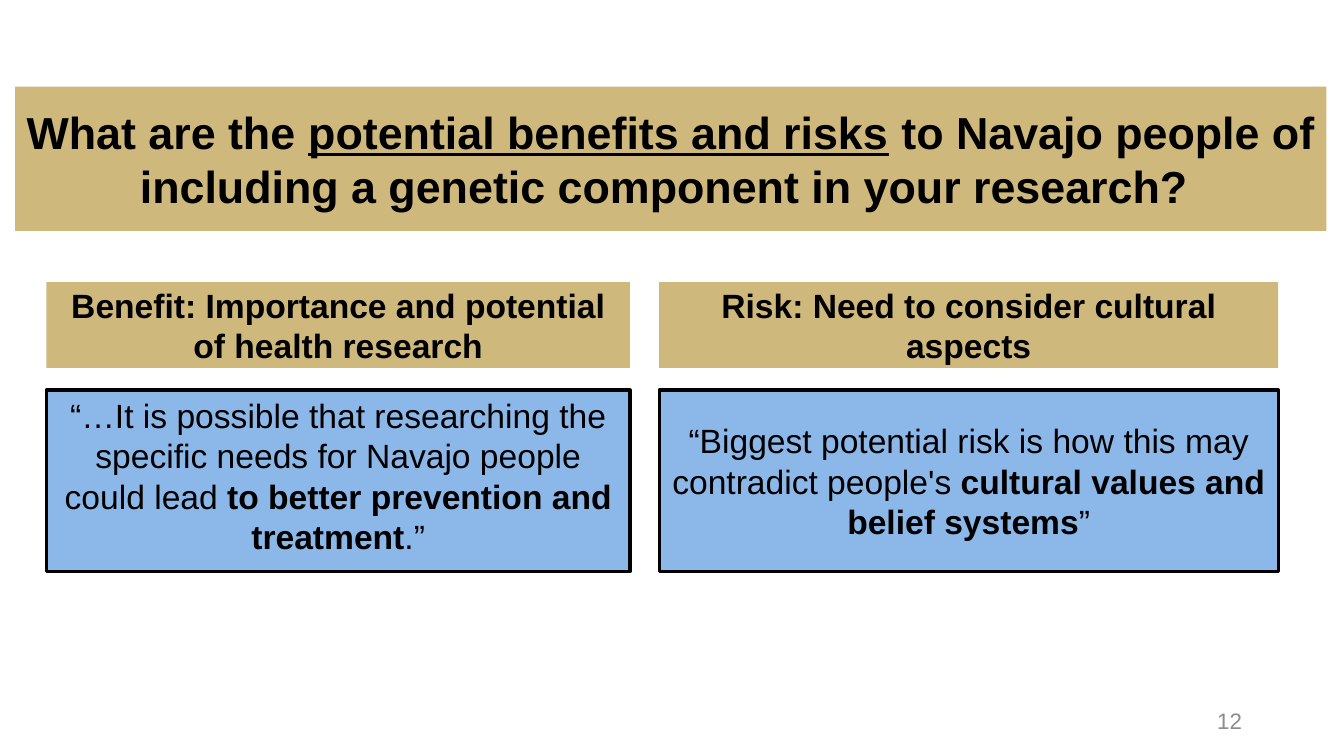
from pptx import Presentation
from pptx.dml.color import RGBColor
from pptx.enum.shapes import MSO_SHAPE
from pptx.enum.text import MSO_ANCHOR, MSO_AUTO_SIZE, PP_ALIGN
from pptx.util import Pt

RECTANGLE = MSO_SHAPE.RECTANGLE
TOP, MIDDLE = MSO_ANCHOR.TOP, MSO_ANCHOR.MIDDLE
CENTER, RIGHT = PP_ALIGN.CENTER, PP_ALIGN.RIGHT
NO_AUTOFIT = MSO_AUTO_SIZE.NONE

GOLD = RGBColor(0xCF, 0xB8, 0x7C)
BLUE = RGBColor(0x8B, 0xB8, 0xE8)
BLACK = RGBColor(0, 0, 0)
GRAY = RGBColor(0x8C, 0x8C, 0x8C)

# Content: runs are (text, bold, underline)
QUESTION = [
    ("What are the ", True, False),
    ("potential benefits and risks", True, True),
    (" to Navajo people of including a genetic component in your research? ", True, False),
]
# Columns: left, width, heading, quote runs, quote anchor
COLUMNS = [
    (33.12, 416.88, "Benefit: Importance and potential of health research", [
        ("“…It is possible that researching the specific needs for Navajo people could lead ",
         False, False),
        ("to better prevention and treatment", True, False),
        (".”", False, False),
    ], TOP),
    (470.88, 442.08, "Risk: Need to consider cultural aspects", [
        ("“Biggest potential risk is how this may contradict people's ", False, False),
        ("cultural values and belief systems", True, False),
        ("”", False, False),
    ], MIDDLE),
]
SLIDE_NUMBER = "12"

# Rows: top, height
HEADING_ROW = (201.6, 61.2)
QUOTE_ROW = (278.64, 129.6)


def write(shape, runs, size, color=BLACK, anchor=MIDDLE, alignment=CENTER):
    frame = shape.text_frame
    frame.word_wrap = True
    frame.auto_size = NO_AUTOFIT
    frame.vertical_anchor = anchor
    paragraph = frame.paragraphs[0]
    paragraph.alignment = alignment
    for text, bold, underline in runs:
        run = paragraph.add_run()
        run.text = text
        font = run.font
        font.name, font.size = "Arial", Pt(size)
        font.bold, font.underline = bold, underline
        font.color.rgb = color


def paint(shape, color):
    shape.fill.solid()
    shape.fill.fore_color.rgb = color


def add_box(slide, left, width, row, color):
    top, height = row
    box = slide.shapes.add_shape(RECTANGLE, Pt(left), Pt(top), Pt(width), Pt(height))
    box.shadow.inherit = False
    paint(box, color)
    box.line.fill.background()
    return box


def main():
    presentation = Presentation()
    presentation.slide_width, presentation.slide_height = Pt(960), Pt(540)
    slide = presentation.slides.add_slide(presentation.slide_layouts[5])

    # Question banner
    title = slide.shapes.title
    title.left, title.top = Pt(10.8), Pt(61.92)
    title.width, title.height = Pt(936.72), Pt(102.96)
    paint(title, GOLD)
    write(title, QUESTION, 32)

    # Benefit and risk columns
    for left, width, heading, quote, anchor in COLUMNS:
        heading_box = add_box(slide, left, width, HEADING_ROW, GOLD)
        write(heading_box, [(heading, True, False)], 24)
        quote_box = add_box(slide, left, width, QUOTE_ROW, BLUE)
        quote_box.line.color.rgb = BLACK
        quote_box.line.width = Pt(2.25)
        write(quote_box, quote, 24, anchor=anchor)

    # Slide number
    number_box = slide.shapes.add_textbox(Pt(678.24), Pt(500.4), Pt(216), Pt(28.8))
    write(number_box, [(SLIDE_NUMBER, False, False)], 16, GRAY, alignment=RIGHT)

    presentation.save("out.pptx")


if __name__ == "__main__":
    main()
